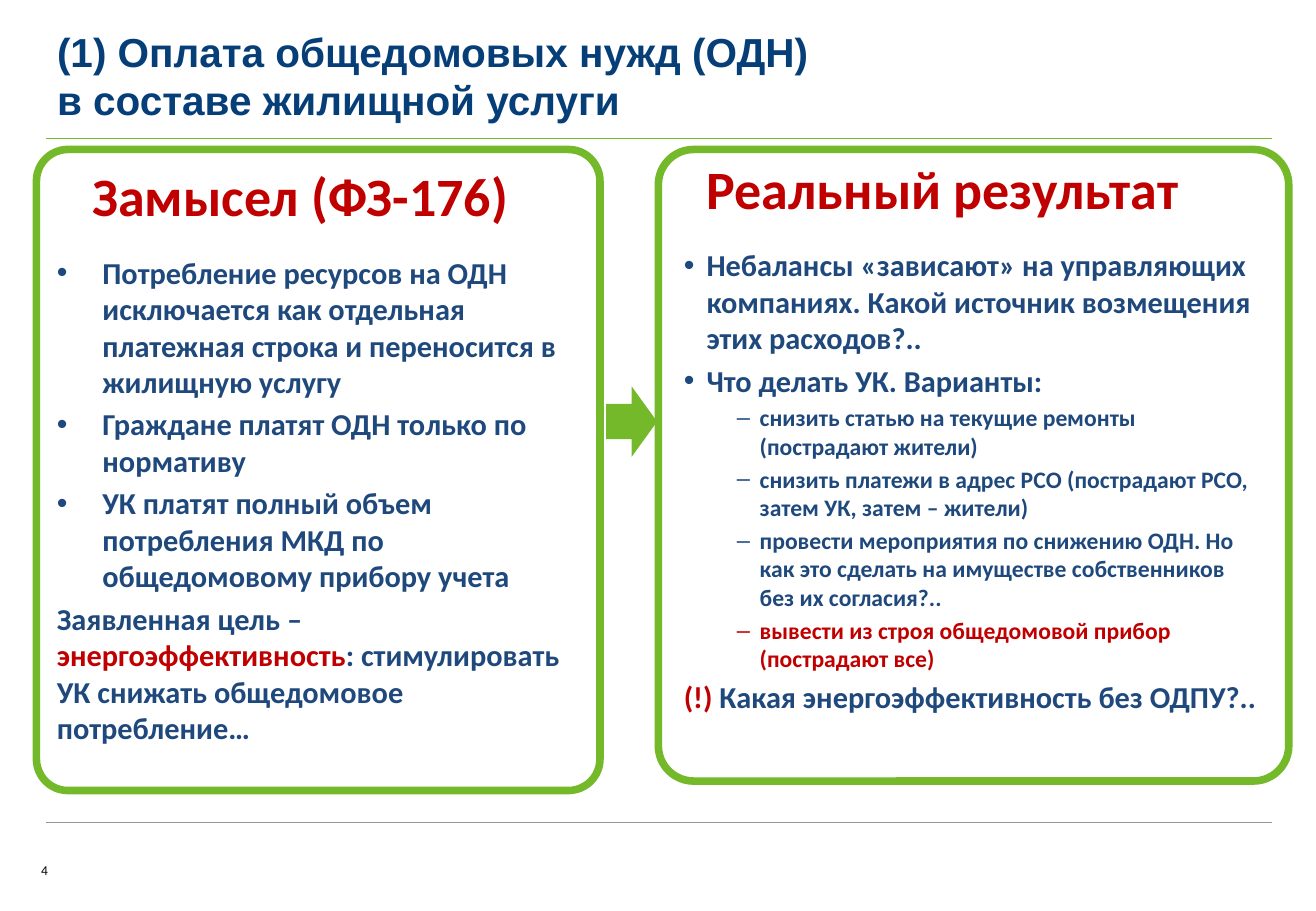
from lxml import etree
from pptx import Presentation
from pptx.dml.color import RGBColor
from pptx.enum.shapes import MSO_CONNECTOR, MSO_SHAPE
from pptx.enum.text import MSO_ANCHOR, MSO_AUTO_SIZE, PP_ALIGN
from pptx.oxml.ns import qn
from pptx.util import Pt

LEFT, MIDDLE, TOP = PP_ALIGN.LEFT, MSO_ANCHOR.MIDDLE, MSO_ANCHOR.TOP
ROUNDED, ARROW = MSO_SHAPE.ROUNDED_RECTANGLE, MSO_SHAPE.RIGHT_ARROW
STRAIGHT, NO_FIT = MSO_CONNECTOR.STRAIGHT, MSO_AUTO_SIZE.NONE

COLORS = {"green": "74B929", "red": "C00000", "blue": "1F497D",
          "navy": "063E78", "grey": "969696", "black": "000000"}

STYLES = {
    "title_numbered": dict(size=24, font="Arial", color="navy", left=36, hang=-36, number="arabicParenBoth"),
    "title": dict(size=24, font="Arial", color="navy"),
    "left_head": dict(size=32, color="red", left=13.5, hang=7.5, after=12),
    "right_head": dict(size=32, color="red", left=13.5, after=12),
    "left_item": dict(left=27, hang=-27, before=3.6, bullet="•"),
    "right_item": dict(left=13.5, hang=-13.5, before=3.6, bullet="•"),
    "option": dict(size=14, left=45, hang=-13.5, before=2.8, bullet="–"),
    "plain": dict(before=3.6),
    "number": dict(size=8, color="black", bold=False),
}

TITLE = [
    ("title_numbered", ["Оплата общедомовых нужд (ОДН)"]),
    ("title", ["в составе жилищной услуги"]),
]
INTENT = [
    ("left_head", ["Замысел (ФЗ-176)"]),
    ("left_item", ["Потребление ресурсов на ОДН исключается как отдельная платежная строка "
                   "и переносится в жилищную услугу"]),
    ("left_item", ["Граждане платят ОДН только по нормативу"]),
    ("left_item", ["УК платят полный объем потребления МКД по общедомовому прибору учета"]),
    ("plain", ["Заявленная цель – ", ("энергоэффективность", "red"),
               ": стимулировать УК снижать общедомовое потребление…"]),
]
RESULT = [
    ("right_head", ["Реальный результат"]),
    ("right_item", ["Небалансы «зависают» на управляющих компаниях. "
                    "Какой источник возмещения этих расходов?.."]),
    ("right_item", ["Что делать УК. Варианты:"]),
    ("option", ["снизить статью на текущие ремонты (пострадают жители)"]),
    ("option", ["снизить платежи в адрес РСО (пострадают РСО, затем УК, затем – жители)"]),
    ("option", ["провести мероприятия по снижению ОДН. Но как это сделать "
                "на имуществе собственников без их согласия?.."]),
    ("option", [("вывести из строя общедомовой прибор (пострадают все)", "red")]),
    ("plain", [("(!) ", "red"), "Какая энергоэффективность без ОДПУ?.."]),
]
PANELS = [
    dict(frame=(21.6, 88.6, 334, 380), text=(26.6, 92.9, 323.3, 347), content=INTENT),
    dict(frame=(390.2, 88.6, 373.7, 374.4), text=(398.2, 88.6, 355.7, 236), content=RESULT),
]
RULES = [(82, "green"), (487.4, "grey")]
RULE_LEFT, RULE_RIGHT = 27.4, 753.8
TITLE_BOX = (26.6, 8.6, 727.2, 72)
ARROW_BOX = (359.3, 229, 30.2, 41.8)
NUMBER_BOX = (17.3, 509.8, 30.2, 11.5)


def rgb(name):
    return RGBColor.from_string(COLORS[name])


def points(box):
    return [Pt(v) for v in box]


def fill_text(tf, content, anchor=TOP):
    for name, value in dict(word_wrap=True, auto_size=NO_FIT, vertical_anchor=anchor).items():
        setattr(tf, name, value)
    for i, (style, runs) in enumerate(content):
        st = STYLES[style]
        p = tf.paragraphs[0] if i == 0 else tf.add_paragraph()
        layout = dict(alignment=LEFT, space_before=Pt(st.get("before", 0)),
                      space_after=Pt(st.get("after", 0)))
        for name, value in layout.items():
            setattr(p, name, value)
        pPr = p._p.get_or_add_pPr()
        pPr.set("marL", str(Pt(st.get("left", 0))))
        pPr.set("indent", str(Pt(st.get("hang", 0))))
        if "bullet" in st:
            etree.SubElement(pPr, qn("a:buFont")).set("typeface", "Arial")
            etree.SubElement(pPr, qn("a:buChar")).set("char", st["bullet"])
        elif "number" in st:
            etree.SubElement(pPr, qn("a:buAutoNum")).set("type", st["number"])
        else:
            etree.SubElement(pPr, qn("a:buNone"))
        for run in runs:
            text, color = run if isinstance(run, tuple) else (run, st.get("color", "blue"))
            r = p.add_run()
            r.text = text
            font = dict(name=st.get("font", "Calibri"), size=Pt(st.get("size", 18)),
                        bold=st.get("bold", True))
            for name, value in font.items():
                setattr(r.font, name, value)
            r.font.color.rgb = rgb(color)


def add_text(s, box, content, anchor=TOP):
    sp = s.shapes.add_textbox(*points(box))
    fill_text(sp.text_frame, content, anchor)


prs = Presentation()
prs.slide_width, prs.slide_height = Pt(780), Pt(540)
s = prs.slides.add_slide(prs.slide_layouts[5])

title = s.shapes.title
title.left, title.top, title.width, title.height = points(TITLE_BOX)
fill_text(title.text_frame, TITLE, MIDDLE)

for y, color in RULES:
    line = s.shapes.add_connector(STRAIGHT, *points((RULE_LEFT, y, RULE_RIGHT, y)))
    line.line.color.rgb = rgb(color)
    line.line.width = Pt(0.75)
    etree.SubElement(line._element.spPr, qn("a:effectLst"))

for panel in PANELS:
    frame = s.shapes.add_shape(ROUNDED, *points(panel["frame"]))
    frame.adjustments[0] = 0.056
    frame.shadow.inherit = False
    frame.fill.background()
    frame.line.color.rgb = rgb("green")
    frame.line.width = Pt(4.5)
    add_text(s, panel["text"], panel["content"])

arrow = s.shapes.add_shape(ARROW, *points(ARROW_BOX))
arrow.shadow.inherit = False
arrow.fill.solid()
arrow.fill.fore_color.rgb = rgb("green")
arrow.line.fill.background()

add_text(s, NUMBER_BOX, [("number", ["4"])], MIDDLE)

prs.save("out.pptx")
